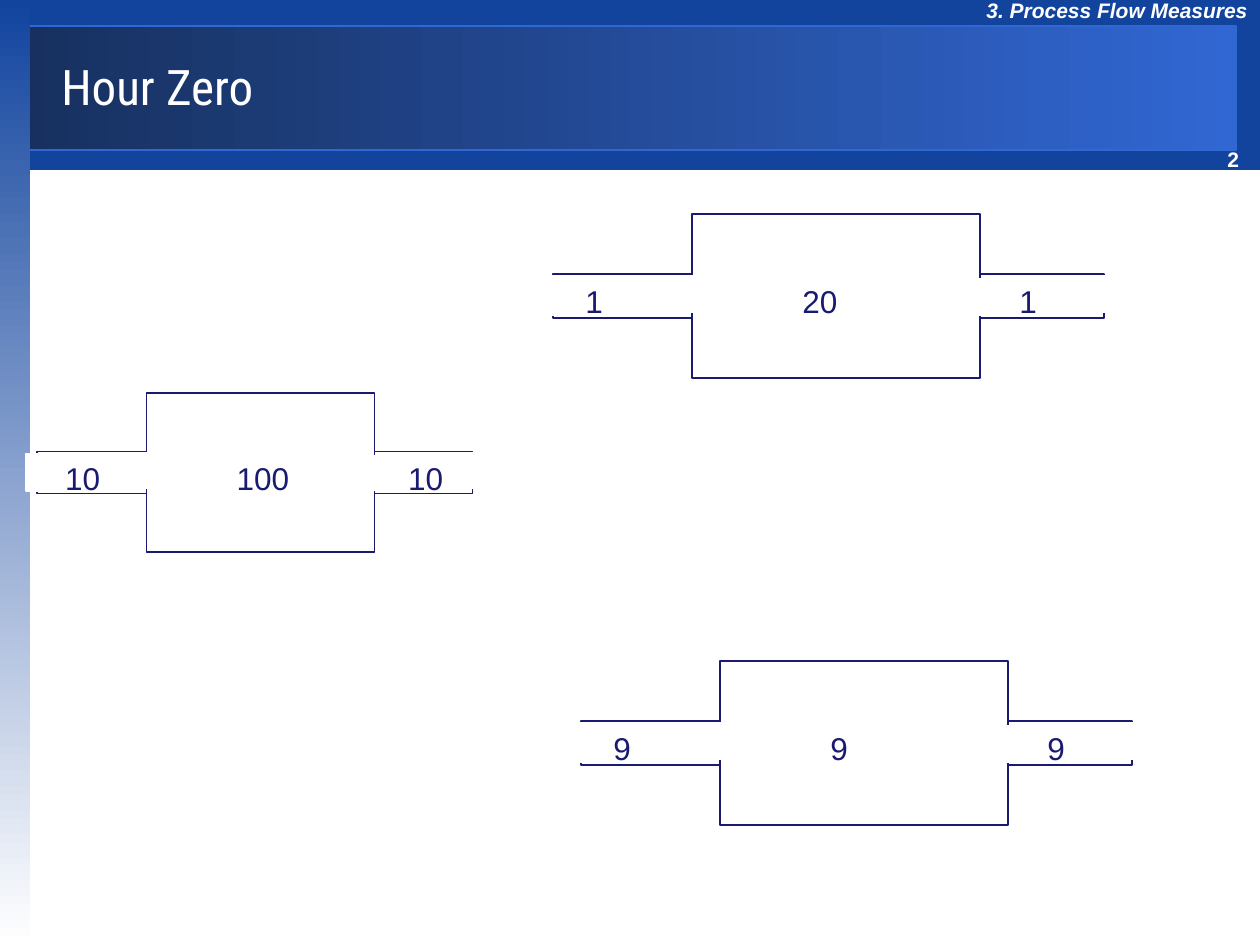
"""Build the "Hour Zero" process flow slide with three tank-and-pipe diagrams."""
import pptx
import pptx.dml.color
import pptx.enum.shapes
import pptx.enum.text
import pptx.util

EMU_PER_PX = 914400 / 126
NAVY, BLUE, BRIGHT, WHITE = "1A1A70", "12449E", "3167D3", "FFFFFF"


def paint(shape, fill, line=None, angle=0):
    shape.shadow.inherit = False
    if isinstance(fill, tuple):
        shape.fill.gradient()
        shape.fill.gradient_angle = angle
        for stop, position, tone in zip(shape.fill.gradient_stops, (0, 1), fill):
            stop.position = position
            stop.color.rgb = pptx.dml.color.RGBColor.from_string(tone)
    else:
        shape.fill.solid()
        shape.fill.fore_color.rgb = pptx.dml.color.RGBColor.from_string(fill)
    if line:
        shape.line.color.rgb = pptx.dml.color.RGBColor.from_string(line)
        shape.line.width = pptx.util.Pt(0.75)
    else:
        shape.line.fill.background()


def write(shape, text, size=18, font="Arial", color=WHITE, bold=False,
          italic=False, wrap=True, anchor="TOP"):
    frame = shape.text_frame
    frame.word_wrap = wrap
    frame.margin_right = 0
    frame.vertical_anchor = pptx.enum.text.MSO_ANCHOR[anchor]
    paragraph = frame.paragraphs[0]
    paragraph.alignment = pptx.enum.text.PP_ALIGN.LEFT
    run = paragraph.add_run()
    run.text = text
    run.font.size = pptx.util.Pt(size)
    run.font.name = font
    run.font.bold = bold
    run.font.italic = italic
    run.font.color.rgb = pptx.dml.color.RGBColor.from_string(color)


deck = pptx.Presentation()
deck.slide_width = pptx.util.Inches(10)
deck.slide_height = pptx.util.Inches(7.5)
slide = deck.slides.add_slide(deck.slide_layouts[6])
RECTANGLE = pptx.enum.shapes.MSO_SHAPE.RECTANGLE

for place, fill, line, angle in [
    ((25, 0, 1235, 170), BLUE, None, 0),
    ((25, 26, 1211, 124), ("17305F", BRIGHT), BRIGHT, 0),
    ((0, 0, 30, 945), (BLUE, WHITE), None, 270),
]:
    band = slide.shapes.add_shape(RECTANGLE, *(round(v * EMU_PER_PX) for v in place))
    paint(band, fill, line, angle)

for place, text, style in [
    ((1215, 140, 50, 38), "2", dict(size=12, bold=True)),
    ((974, -9, 286, 38), "3. Process Flow Measures", dict(size=12, bold=True, italic=True, wrap=False)),
    ((49, 26, 1171, 119), "Hour Zero", dict(size=28, font="Roboto Condensed", anchor="MIDDLE")),
]:
    heading = slide.shapes.add_textbox(*(round(v * EMU_PER_PX) for v in place))
    write(heading, text, **style)

parts = [
    ("pipe", (0, 60, 551, 44), NAVY),
    ("tank", (139, 0, 288, 164), NAVY),
    ("stock", (237, 62, 99, 36), WHITE),
    ("right opening", (363, 65, 99, 36), WHITE),
    ("inlet", (-14, 62, 41, 39), WHITE),
    ("outlet", (514, 62, 99, 36), WHITE),
    ("inflow", (20, 62, 99, 36), WHITE),
    ("outflow", (454, 62, 99, 36), WHITE),
    ("left opening", (91, 62, 99, 36), WHITE),
]
flows = [
    ((37, 393), (0.79, 0.97), {"inflow": "10", "stock": "100", "outflow": "10"}),
    ((581, 661), (1, 1), {"inflow": "9", "stock": "9", "outflow": "9"}),
    ((553, 214), (1, 1), {"inflow": "1", "stock": "20", "outflow": "1"}),
]
for (left, top), (across, down), values in flows:
    flow = slide.shapes.add_group_shape()
    for part, (x, y, width, height), line in parts:
        place = (left + x * across, top + y * down, width * across, height * down)
        block = flow.shapes.add_shape(RECTANGLE, *(round(v * EMU_PER_PX) for v in place))
        paint(block, WHITE, line)
        if part in values:
            write(block, values[part], color=NAVY)

deck.save("out.pptx")
